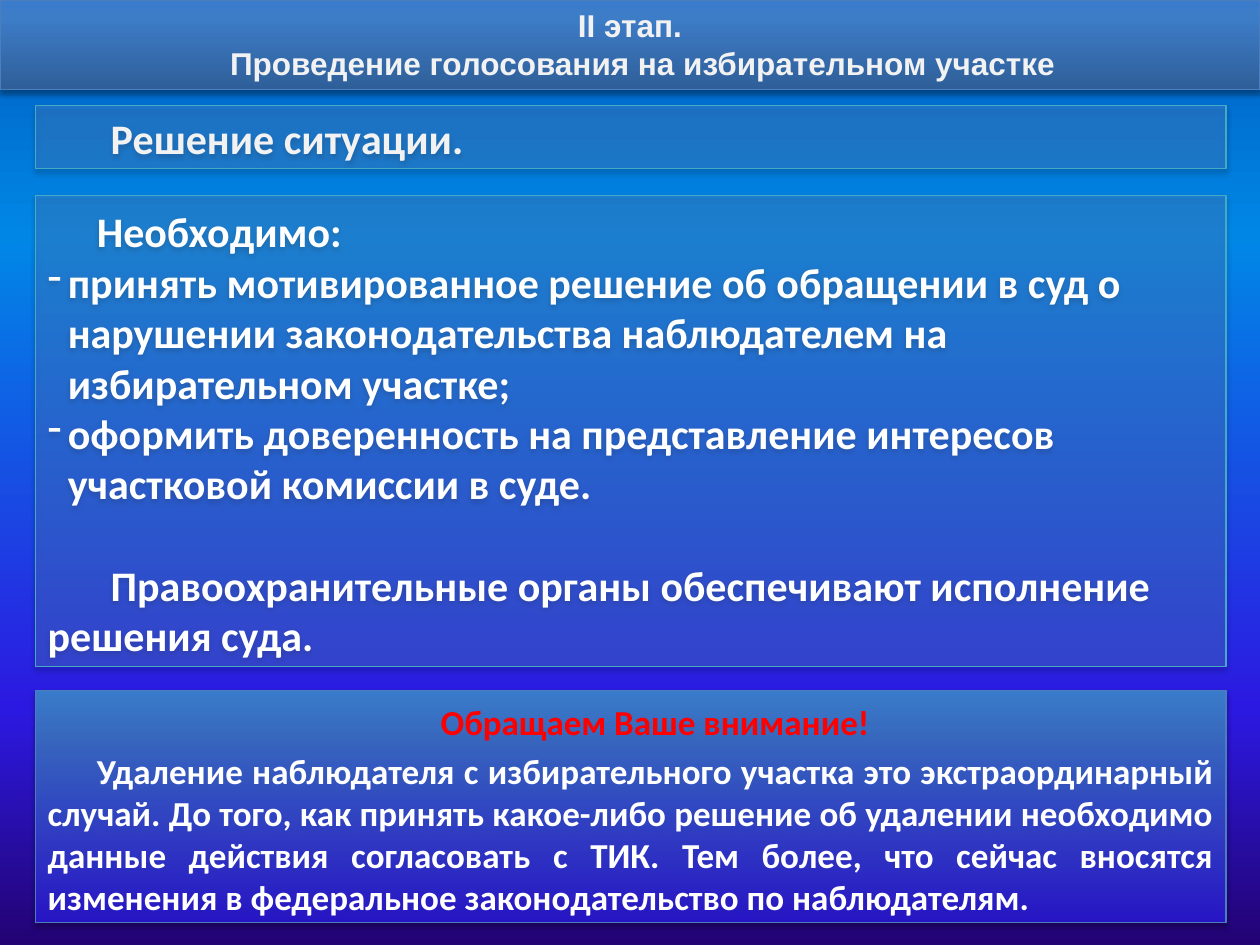
"""Builds the slide on the second stage: voting at the polling station."""
from pptx import Presentation
from pptx.dml.color import RGBColor
from pptx.enum.shapes import MSO_SHAPE as Shape
from pptx.enum.text import MSO_ANCHOR as Anchor, PP_ALIGN as Align
from pptx.oxml import parse_xml
from pptx.oxml.ns import nsdecls, qn
from pptx.util import Inches, Pt

WHITE, PALE, RED = "FFFFFF", "F2F2F2", "FF0000"
BACKGROUND = [(0, "230373", 100), (25, "2C19E1", 100), (75, "0087E6", 100), (100, "005CBF", 100)]
HEADER_FILL = [(0, "2F5F99", 100), (80, "3D7CC7", 100), (100, "3A7CCB", 100)]
NOTICE_FILL = [(0, "2C19E1", 78), (80, "3D7CC7", 81), (100, "3A7CCB", 100)]
GLASS_FILL = [(0, "558ED5", 33)]
BLUE_EDGE, TEAL_EDGE = "4B7EBC", "46AAC5"
MARGIN, PANEL_WIDTH = 0.28, 9.45

HEADER = [
    ("II\u00a0этап.", {}),
    ("Проведение голосования на избирательном участке", dict(margin=0.2)),
]
HEADING = [("Решение ситуации.", dict(indent=0.5, align=Align.JUSTIFY))]
ACTIONS = [
    ("Необходимо:", dict(indent=0.39)),
    ("принять мотивированное решение об обращении в суд о нарушении "
     "законодательства наблюдателем на избирательном участке;",
     dict(margin=0.16, indent=-0.16, bullet="-")),
    ("оформить доверенность на представление интересов участковой комиссии в суде.",
     dict(margin=0.16, indent=-0.16, bullet="-")),
    ("Правоохранительные органы обеспечивают исполнение решения суда.",
     dict(indent=0.5, before=29)),
]
NOTICE = [
    ("Обращаем Ваше внимание!", dict(color=RED, align=Align.CENTER, indent=0.39, after=2)),
    ("Удаление наблюдателя с избирательного участка это экстраординарный случай. "
     "До того, как принять какое-либо решение об удалении необходимо данные действия "
     "согласовать с ТИК. Тем более, что сейчас вносятся изменения в федеральное "
     "законодательство по наблюдателям.",
     dict(align=Align.JUSTIFY, indent=0.39, before=2, after=2)),
]

PANELS = [
    dict(box=(0, 0, 10, 0.71), stops=HEADER_FILL, edge=BLUE_EDGE, content=HEADER,
         style=dict(size=18, font="Arial", color=PALE, align=Align.CENTER)),
    dict(box=(MARGIN, 1.55, PANEL_WIDTH, 3.74), stops=GLASS_FILL, edge=TEAL_EDGE,
         content=ACTIONS, style=dict(size=24), anchor=Anchor.MIDDLE, inset_top=0.08),
    dict(box=(MARGIN, 0.84, PANEL_WIDTH, 0.5), stops=GLASS_FILL, edge=TEAL_EDGE,
         content=HEADING, style=dict(size=24, color=PALE), anchor=Anchor.MIDDLE),
    dict(box=(MARGIN, 5.48, PANEL_WIDTH, 1.84), stops=NOTICE_FILL, edge=BLUE_EDGE,
         content=NOTICE, style=dict(size=20), inset_top=0.08),
]


def rgb(code):
    return RGBColor.from_string(code)


def paint(fill, properties, stops):
    fill.solid()
    colors = [f'<a:srgbClr val="{code}"><a:alpha val="{alpha * 1000}"/></a:srgbClr>'
              for _, code, alpha in stops]
    if len(stops) == 1:
        xml = f'<a:solidFill {nsdecls("a")}>{colors[0]}</a:solidFill>'
    else:
        marks = "".join(f'<a:gs pos="{stop[0] * 1000}">{color}</a:gs>'
                        for stop, color in zip(stops, colors))
        xml = (f'<a:gradFill {nsdecls("a")} rotWithShape="1"><a:gsLst>{marks}</a:gsLst>'
               '<a:lin ang="16200000" scaled="0"/></a:gradFill>')
    properties.replace(properties.find(qn("a:solidFill")), parse_xml(xml))


def cast_shadow(shape):
    shape.shadow.inherit = False
    shape._element.spPr.find(qn("a:effectLst")).append(parse_xml(
        f'<a:outerShdw {nsdecls("a")} blurRad="{Pt(3.1)}" dist="{Pt(1.8)}" dir="5400000" '
        'rotWithShape="0"><a:srgbClr val="000000"><a:alpha val="35000"/></a:srgbClr>'
        '</a:outerShdw>'))


def write(paragraph, text, *, size, font="Calibri", color=WHITE, align=Align.LEFT,
          margin=0, indent=0, bullet=None, before=0, after=0):
    properties = paragraph._p.get_or_add_pPr()
    properties.set("marL", str(Inches(margin)))
    properties.set("indent", str(Inches(indent)))
    if bullet:
        properties.append(parse_xml(f'<a:buChar {nsdecls("a")} char="{bullet}"/>'))
    paragraph.alignment = align
    paragraph.space_before, paragraph.space_after = Pt(before), Pt(after)
    run = paragraph.add_run()
    run.text = text
    run.font.name, run.font.size, run.font.bold = font, Pt(size), True
    run.font.color.rgb = rgb(color)


def add_panel(slide, box, stops, edge, content, style, anchor=Anchor.TOP, inset_top=0.05):
    panel = slide.shapes.add_shape(Shape.RECTANGLE, *map(Inches, box))
    paint(panel.fill, panel._element.spPr, stops)
    panel.line.color.rgb = rgb(edge)
    panel.line.width = Pt(0.75)
    cast_shadow(panel)
    frame = panel.text_frame
    frame.word_wrap = True
    frame.vertical_anchor = anchor
    frame.margin_top = Inches(inset_top)
    for index, (text, extra) in enumerate(content):
        paragraph = frame.add_paragraph() if index else frame.paragraphs[0]
        write(paragraph, text, **{**style, **extra})


def main():
    deck = Presentation()
    deck.slide_width, deck.slide_height = Inches(10), Inches(7.5)
    slide = deck.slides.add_slide(deck.slide_layouts[6])
    backdrop = slide.background.fill
    backdrop.solid()
    paint(backdrop, slide._element.find(".//" + qn("p:bgPr")), BACKGROUND)
    for panel in PANELS:
        add_panel(slide, **panel)
    deck.save("out.pptx")


if __name__ == "__main__":
    main()
